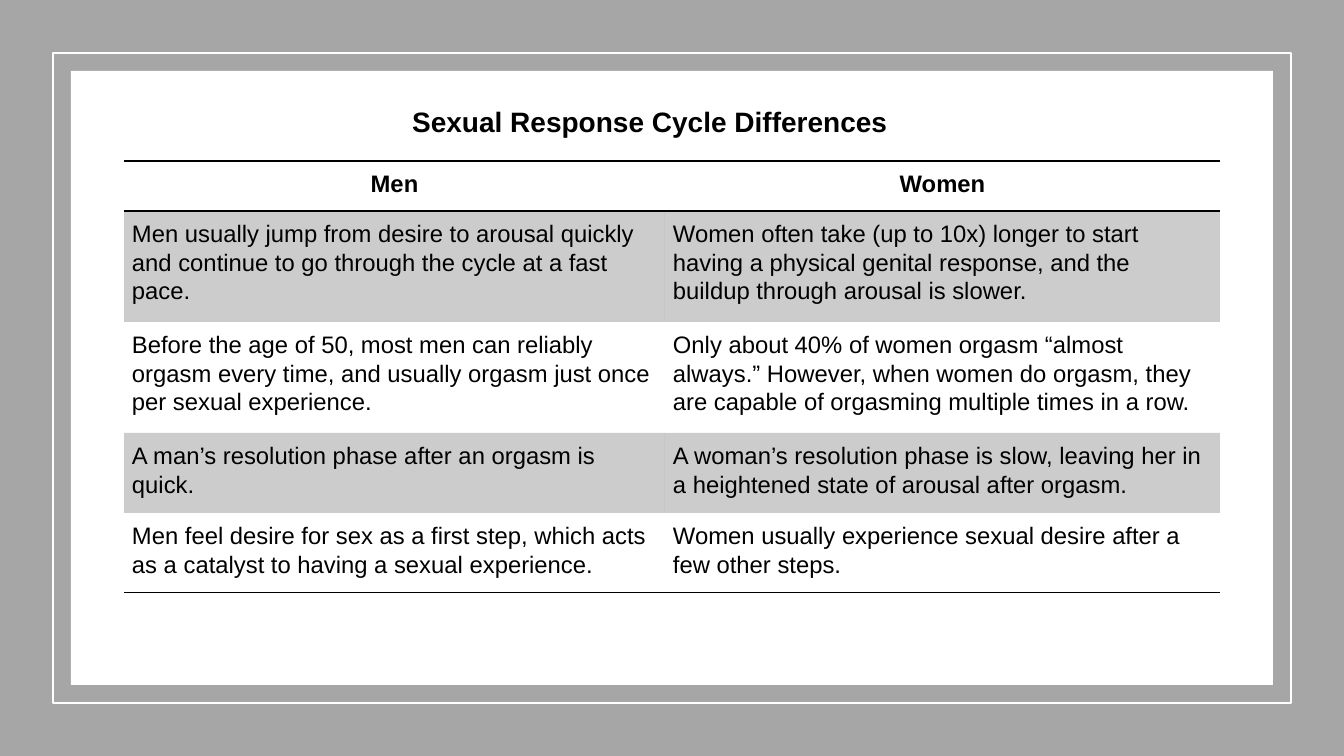
from dataclasses import dataclass

from lxml.etree import SubElement
from pptx import Presentation
from pptx.dml.color import RGBColor
from pptx.enum.shapes import MSO_SHAPE
from pptx.enum.text import MSO_ANCHOR, MSO_AUTO_SIZE, PP_ALIGN
from pptx.oxml import parse_xml
from pptx.oxml.ns import nsdecls, qn
from pptx.util import Emu, Pt

SLIDE_WIDTH, SLIDE_HEIGHT = 1344, 756
EMU_PER_PX = 12192000 / SLIDE_WIDTH
NO_STYLE_NO_GRID = "{2D5ABB26-0587-4C30-8999-92F81FD0307C}"


@dataclass(frozen=True)
class Theme:
    font: str = "Arial"
    text: RGBColor = RGBColor(0, 0, 0)
    paper: RGBColor = RGBColor(0xFF, 0xFF, 0xFF)
    surround: RGBColor = RGBColor(0xA6, 0xA6, 0xA6)
    band_opacity: int = 20
    title_size: int = 20
    table_size: int = 17
    frame_line: int = 2
    rule_line: int = 1


THEME = Theme()

TITLE = "Sexual Response Cycle Differences"
COLUMN_WIDTHS = [541, 555]
ROW_HEIGHTS = [50, 111, 111, 80, 80]
DIFFERENCES = [
    ("Men", "Women"),
    ("Men usually jump from desire to arousal quickly and continue to go "
     "through the cycle at a fast pace.",
     "Women often take (up to 10x) longer to start having a physical genital "
     "response, and the buildup through arousal is slower."),
    ("Before the age of 50, most men can reliably orgasm every time, and "
     "usually orgasm just once per sexual experience.",
     "Only about 40% of women orgasm “almost always.” However, when women do "
     "orgasm, they are capable of orgasming multiple times in a row."),
    ("A man’s resolution phase after an orgasm is quick.",
     "A woman’s resolution phase is slow, leaving her in a heightened state "
     "of arousal after orgasm."),
    ("Men feel desire for sex as a first step, which acts as a catalyst to "
     "having a sexual experience.",
     "Women usually experience sexual desire after a few other steps."),
]


def px(length):
    return Emu(round(length * EMU_PER_PX))


def format_text(paragraph, size, bold, align):
    paragraph.alignment = align
    for run in paragraph.runs:
        run.font.name = THEME.font
        run.font.size = Pt(size)
        run.font.bold = bold
        run.font.color.rgb = THEME.text


def add_rectangle(slide, left, top, width, height, fill=None, line=None):
    shape = slide.shapes.add_shape(
        MSO_SHAPE.RECTANGLE, px(left), px(top), px(width), px(height))
    shape.shadow.inherit = False
    if fill is None:
        shape.fill.background()
    else:
        shape.fill.solid()
        shape.fill.fore_color.rgb = fill
    if line is None:
        shape.line.fill.background()
    else:
        shape.line.color.rgb = line
        shape.line.width = Pt(THEME.frame_line)


def add_frame(slide, left, top, width, height):
    """Grey surround, thin white outline and white panel, one in another."""
    add_rectangle(slide, left, top, width, height, fill=THEME.surround)
    for inset, colours in ((53, {"line": THEME.paper}), (71, {"fill": THEME.paper})):
        add_rectangle(slide, left + inset, top + inset,
                      width - 2 * inset, height - 2 * inset, **colours)


def place_title(slide, left, top, width, height):
    title = slide.shapes.title
    title.left, title.top = px(left), px(top)
    title.width, title.height = px(width), px(height)
    slide.shapes.element.append(title.element)  # in front of the white panel
    frame = title.text_frame
    frame.text = TITLE
    frame.word_wrap = True
    frame.auto_size = MSO_AUTO_SIZE.SHAPE_TO_FIT_TEXT
    frame.vertical_anchor = MSO_ANCHOR.TOP
    format_text(frame.paragraphs[0], THEME.title_size, True, PP_ALIGN.LEFT)


def add_rules(cell_element, sides):
    """Draw a rule on each named side of a table cell, such as lnT or lnB."""
    properties = cell_element.get_or_add_tcPr()
    for position, side in enumerate(sides):
        properties.insert(position, parse_xml(
            f'<a:{side} {nsdecls("a")} w="{Pt(THEME.rule_line)}"><a:solidFill>'
            f'<a:srgbClr val="{THEME.text}"/></a:solidFill></a:{side}>'))


def fill_band(cell, cell_element):
    cell.fill.solid()
    cell.fill.fore_color.rgb = THEME.text
    colour = cell_element.find(".//" + qn("a:tcPr") + "/" + qn("a:solidFill"))[0]
    SubElement(colour, qn("a:alpha"), val=str(THEME.band_opacity * 1000))


def add_differences_table(slide, left, top):
    graphic = slide.shapes.add_table(
        len(ROW_HEIGHTS), len(COLUMN_WIDTHS), px(left), px(top),
        px(sum(COLUMN_WIDTHS)), px(sum(ROW_HEIGHTS)))
    graphic.element.find(".//" + qn("a:tableStyleId")).text = NO_STYLE_NO_GRID
    table = graphic.table
    table.horz_banding = False
    for column, width in zip(table.columns, COLUMN_WIDTHS):
        column.width = px(width)
    for row, height in zip(table.rows, ROW_HEIGHTS):
        row.height = px(height)

    last_row = len(ROW_HEIGHTS) - 1
    cell_elements = graphic.element.iter(qn("a:tc"))
    for index, texts in enumerate(DIFFERENCES):
        header = index == 0
        for cell, text in zip(table.rows[index].cells, texts):
            cell_element = next(cell_elements)
            cell.text_frame.text = text
            cell.margin_left = cell.margin_right = px(8)
            cell.margin_top = cell.margin_bottom = px(8)
            paragraph = cell.text_frame.paragraphs[0]
            paragraph.line_spacing = 1.07
            format_text(paragraph, THEME.table_size, header,
                        PP_ALIGN.CENTER if header else PP_ALIGN.LEFT)
            if index % 2:
                fill_band(cell, cell_element)
            else:
                cell.fill.background()
            if header:
                add_rules(cell_element, ("lnT", "lnB"))
            elif index == last_row:
                add_rules(cell_element, ("lnB",))


def build_comparison_slide(presentation):
    slide = presentation.slides.add_slide(presentation.slide_layouts[5])
    add_frame(slide, 0, 0, SLIDE_WIDTH, SLIDE_HEIGHT)
    add_differences_table(slide, 124, 161)
    place_title(slide, 402, 99, 591, 44)


def main():
    presentation = Presentation()
    presentation.slide_width = px(SLIDE_WIDTH)
    presentation.slide_height = px(SLIDE_HEIGHT)
    build_comparison_slide(presentation)
    presentation.save("out.pptx")


if __name__ == "__main__":
    main()
